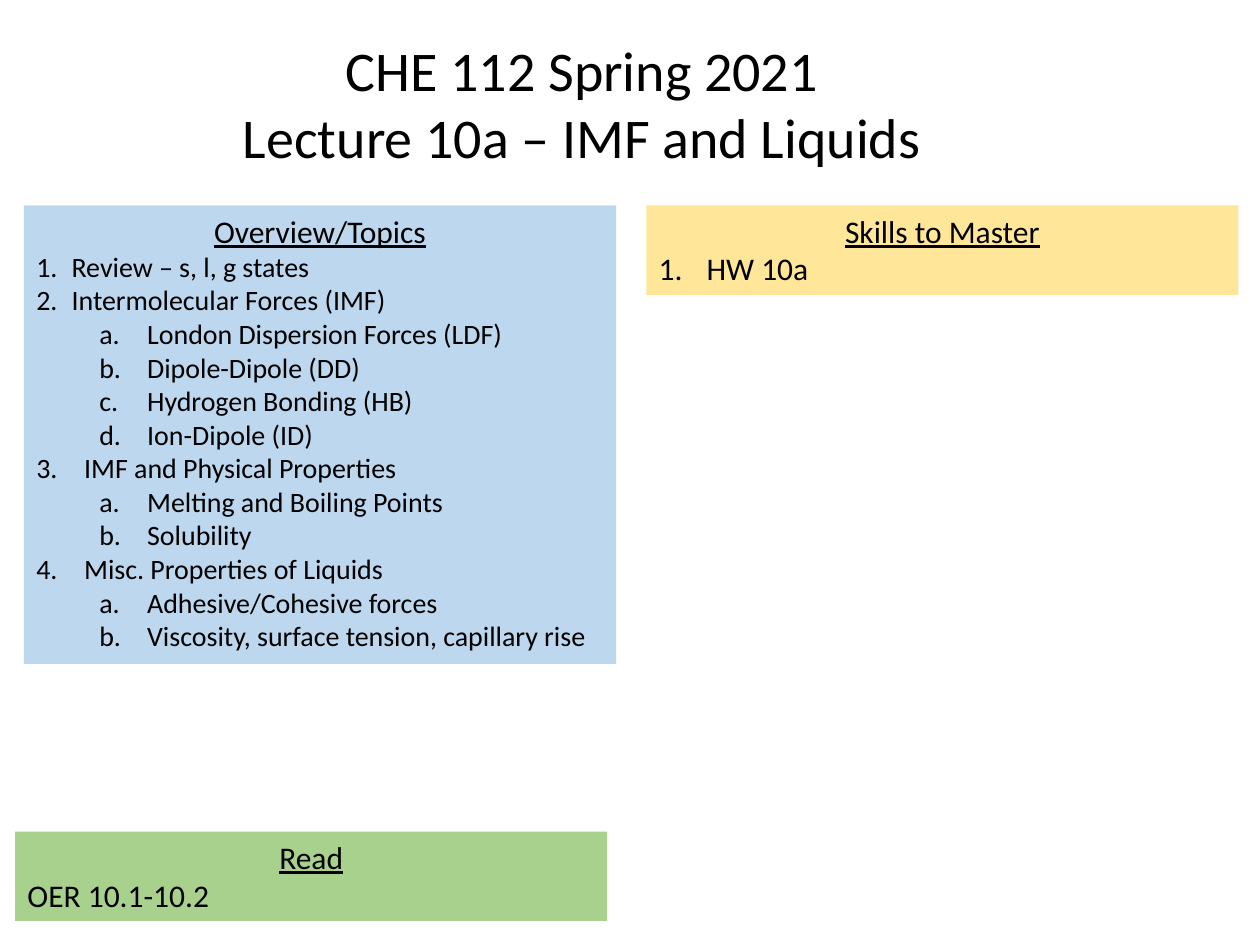
from pptx import Presentation
from pptx.dml.color import RGBColor
from pptx.enum.text import MSO_ANCHOR, MSO_AUTO_SIZE, PP_ALIGN
from pptx.oxml.ns import qn
from pptx.util import Inches, Pt
from lxml.etree import SubElement

INK = {"text": "000000", "topics": "BDD7EE", "skills": "FFE699", "read": "A9D18E"}

# Paragraph kinds: left margin, hanging indent, level, numbering
KINDS = {
    "plain": (0, 0, 0, None),
    "tight": (0.28, 0.28, 0, "arabicPeriod"),
    "main": (0.38, 0.38, 0, "arabicPeriod"),
    "sub": (0.88, 0.38, 1, "alphaLcPeriod"),
}

# Each box: colour, left, top, height, heading, body size, lines
BOXES = [
    ("topics", 0.19, 1.63, 3.64, "Overview/Topics", 16, [
        ("tight", "Review – s, l, g states"),
        ("tight", "Intermolecular Forces (IMF)"),
        ("sub", "London Dispersion Forces (LDF)"),
        ("sub", "Dipole-Dipole (DD)"),
        ("sub", "Hydrogen Bonding (HB)"),
        ("sub", "Ion-Dipole (ID)"),
        ("main", "IMF and Physical Properties"),
        ("sub", "Melting and Boiling Points"),
        ("sub", "Solubility"),
        ("main", "Misc. Properties of Liquids"),
        ("sub", "Adhesive/Cohesive forces"),
        ("sub", "Viscosity, surface tension, capillary rise"),
    ]),
    ("skills", 5.13, 1.63, 0.71, "Skills to Master", 18, [("main", "HW 10a")]),
    ("read", 0.12, 6.6, 0.71, "Read", 18, [("plain", "OER 10.1-10.2")]),
]


def write(para, text, size, **more):
    run = para.add_run()
    run.text = text
    form = {"name": "Calibri", "size": Pt(size), **more}
    for key, value in form.items():
        setattr(run.font, key, value)
    run.font.color.rgb = RGBColor.from_string(INK["text"])


def indent(para, kind):
    left, hang, level, style = KINDS[kind]
    para.level = level
    if style:
        props = para._p.get_or_add_pPr()
        props.set("marL", str(Inches(left)))
        props.set("indent", str(-Inches(hang)))
        SubElement(props, qn("a:buFont"), typeface="+mj-lt")
        SubElement(props, qn("a:buAutoNum"), type=style)


deck = Presentation()
deck.slide_width, deck.slide_height = Inches(10), Inches(7.5)
slide = deck.slides.add_slide(deck.slide_layouts[5])

# Title
title = slide.shapes.title
place = {"left": 1.8, "top": 0.23, "width": 5.64, "height": 1.18}
for key, value in place.items():
    setattr(title, key, Inches(value))
frame = title.text_frame
form = {"word_wrap": False, "auto_size": MSO_AUTO_SIZE.NONE,
        "vertical_anchor": MSO_ANCHOR.TOP}
for key, value in form.items():
    setattr(frame, key, value)
lines = ["CHE 112 Spring 2021", "Lecture 10a – IMF and Liquids"]
for num, text in enumerate(lines):
    para = frame.add_paragraph() if num else frame.paragraphs[0]
    para.alignment = PP_ALIGN.CENTER
    write(para, text, 32)

# Coloured boxes
for hue, left, top, height, head, size, lines in BOXES:
    box = slide.shapes.add_textbox(Inches(left), Inches(top), Inches(4.7), Inches(height))
    box.fill.solid()
    box.fill.fore_color.rgb = RGBColor.from_string(INK[hue])
    frame = box.text_frame
    frame.word_wrap = True
    frame.auto_size = MSO_AUTO_SIZE.SHAPE_TO_FIT_TEXT
    para = frame.paragraphs[0]
    para.alignment = PP_ALIGN.CENTER
    write(para, head, 18, underline=True)
    for kind, text in lines:
        para = frame.add_paragraph()
        indent(para, kind)
        write(para, text, size)

deck.save("out.pptx")
